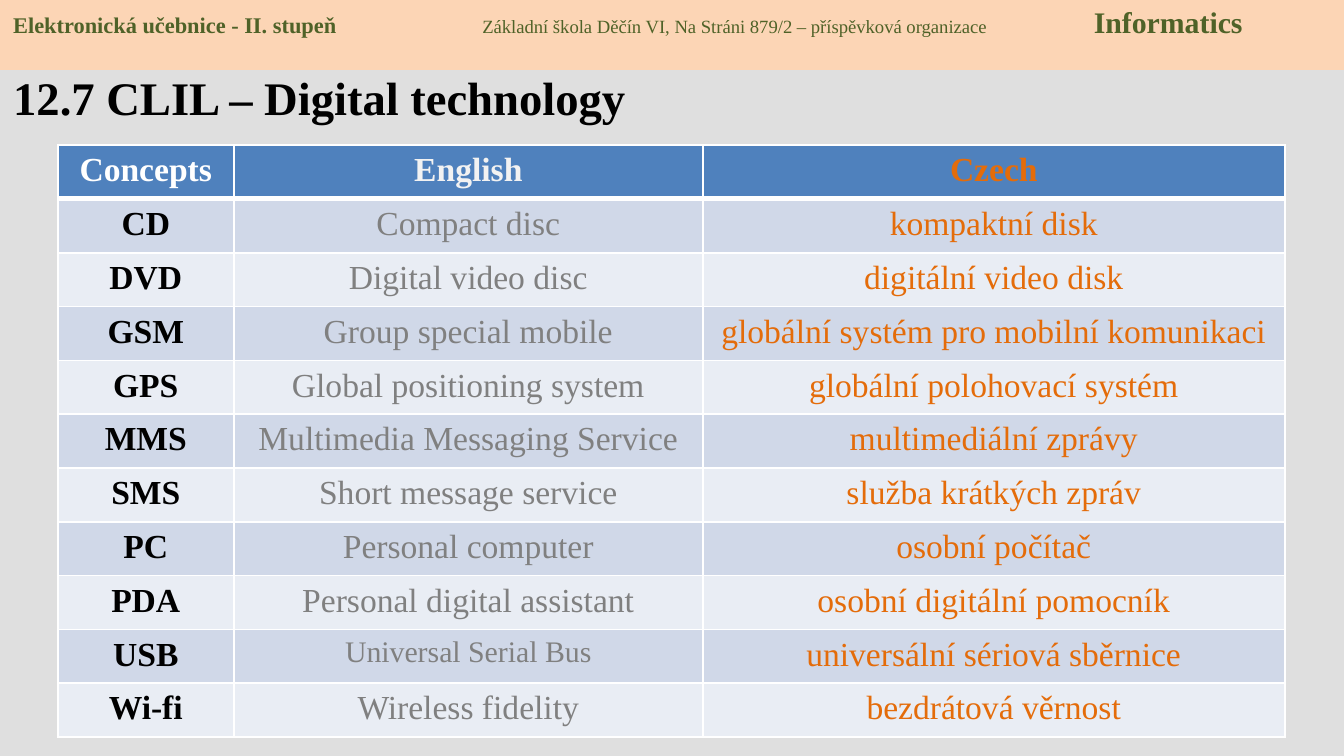
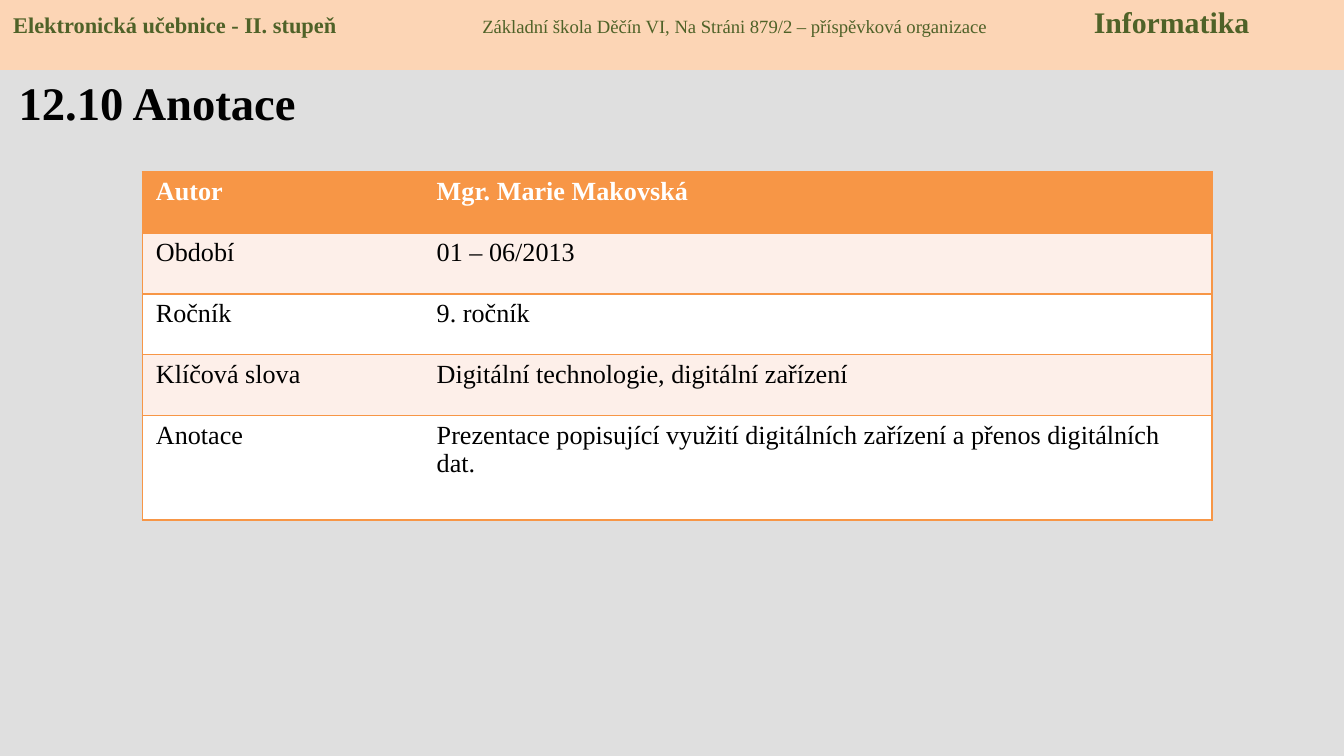
from lxml.etree import SubElement
from pptx import Presentation
from pptx.dml.color import RGBColor
from pptx.enum.shapes import MSO_SHAPE
from pptx.enum.text import MSO_ANCHOR, PP_ALIGN
from pptx.oxml.ns import qn
from pptx.util import Inches, Pt

COLUMNS, ROWS = 100, 56.25
SLIDE_WIDTH = Inches(10)
UNIT = SLIDE_WIDTH / COLUMNS

FONT = "Times New Roman"
BLACK, WHITE, GREY = "000000", "FFFFFF", "808080"
BACKGROUND = "DFDFDF"
BAND, BAND_TEXT = "FCD5B5", "4F6228"
BLUE, BLUE_BANDS = "4F81BD", ("D0D8E8", "E9EDF4")
ORANGE, ORANGE_BANDS = "F79646", ("FDEFE9", WHITE)
CZECH = "E46C0A"

BAND_BOX = (0, -0.2, COLUMNS, 5.4)
BAND_TABS = (34.9, 80.4)

CONCEPTS = [
    ("Concepts", "English", "Czech"),
    ("CD", "Compact disc", "kompaktní disk"),
    ("DVD", "Digital video disc", "digitální video disk"),
    ("GSM", "Group special mobile", "globální systém pro mobilní komunikaci"),
    ("GPS", "Global positioning system", "globální polohovací systém"),
    ("MMS", "Multimedia Messaging Service", "multimediální zprávy"),
    ("SMS", "Short message service", "služba krátkých zpráv"),
    ("PC", "Personal computer", "osobní počítač"),
    ("PDA", "Personal digital assistant", "osobní digitální pomocník"),
    ("USB", "Universal Serial Bus", "universální sériová sběrnice"),
    ("Wi-fi", "Wireless fidelity", "bezdrátová věrnost"),
]
ANNOTATION = [
    ("Autor", "Mgr. Marie Makovská"),
    ("Období", "01 – 06/2013"),
    ("Ročník", "9. ročník"),
    ("Klíčová slova", "Digitální technologie, digitální zařízení"),
    ("Anotace", "Prezentace popisující využití digitálních zařízení a přenos digitálních dat."),
]


def color(value):
    return RGBColor.from_string(value)


def grid(*lengths):
    return [round(length * UNIT) for length in lengths]


def paint(target, value):
    target.fill.solid()
    target.fill.fore_color.rgb = color(value)


def add_run(paragraph, text, size, value, bold=False):
    run = paragraph.add_run()
    run.text = text
    run.font.name = FONT
    run.font.size = Pt(size)
    run.font.bold = bold
    run.font.color.rgb = color(value)


def add_page(deck):
    page = deck.slides.add_slide(deck.slide_layouts[6])
    paint(page.background, BACKGROUND)
    return page


def add_title(page, box, text, anchor):
    title = page.shapes.add_textbox(*grid(*box)).text_frame
    title.word_wrap = True
    title.vertical_anchor = anchor
    add_run(title.paragraphs[0], text, 25, BLACK, True)


def add_band(page, subject):
    band = page.shapes.add_shape(MSO_SHAPE.RECTANGLE, *grid(*BAND_BOX))
    band.shadow.inherit = False
    band.line.fill.background()
    paint(band, BAND)
    band.text_frame.word_wrap = True
    band.text_frame.vertical_anchor = MSO_ANCHOR.TOP
    line = band.text_frame.paragraphs[0]
    line.alignment = PP_ALIGN.LEFT
    stops = SubElement(line._p.get_or_add_pPr(), qn("a:tabLst"))
    for position in grid(*BAND_TABS):
        SubElement(stops, qn("a:tab"), pos=str(position), algn="l")
    add_run(line, "Elektronická učebnice - II. stupeň\t", 12, BAND_TEXT, True)
    add_run(line, "Základní škola Děčín VI, Na Stráni 879/2 – příspěvková organizace\t", 10, BAND_TEXT)
    add_run(line, subject, 16, BAND_TEXT, True)


def set_borders(cell, value, widths):
    properties = cell._tc.get_or_add_tcPr()
    for side, width in zip("LRTB", widths):
        border = SubElement(properties, qn(f"a:ln{side}"), w=str(Pt(width)))
        if width:
            fill = SubElement(border, qn("a:solidFill"))
            SubElement(fill, qn("a:srgbClr"), val=value)
        else:
            SubElement(border, qn("a:noFill"))


def add_table(page, corner, widths, heights, content, header, bands, style_cell):
    box = (*corner, sum(widths), sum(heights))
    table = page.shapes.add_table(len(heights), len(widths), *grid(*box)).table
    for column, width in zip(table.columns, grid(*widths)):
        column.width = width
    for row, height in zip(table.rows, grid(*heights)):
        row.height = height
    for r, texts in enumerate(content):
        for c, text in enumerate(texts):
            cell = table.cell(r, c)
            style_cell(cell, r, c, text)
            paint(cell, bands[(r - 1) % 2] if r else header)


def concept_cell(cell, r, c, text):
    set_borders(cell, WHITE, (1, 1, 3 if r == 1 else 1, 1 if r else 3))
    values = (BLACK, GREY, CZECH) if r else (WHITE, "F2F2F2", CZECH)
    size = 16 if text == "Universal Serial Bus" else 18
    paragraph = cell.text_frame.paragraphs[0]
    paragraph.alignment = PP_ALIGN.CENTER
    add_run(paragraph, text, size, values[c], r == 0 or c == 0)


def annotation_cell(cell, r, c, text):
    set_borders(cell, ORANGE, (1 - c, c, 1, 1))
    cell.margin_left, cell.margin_right, cell.margin_top, cell.margin_bottom = grid(1, 1, 0.4, 0.4)
    add_run(cell.text_frame.paragraphs[0], text, 14, BLACK if r else WHITE, r == 0)


def add_concepts_page(deck):
    page = add_page(deck)
    add_title(page, (0, 2.5, 90, 9.4), "12.7 CLIL – Digital technology", MSO_ANCHOR.MIDDLE)
    add_band(page, "Informatics")
    add_table(page, (4.3, 10.8), (13.1, 34.9, 43.3), [4] * len(CONCEPTS),
              CONCEPTS, BLUE, BLUE_BANDS, concept_cell)


def add_annotation_page(deck):
    page = add_page(deck)
    add_title(page, (0.4, 5, 31.9, 4.9), "12.10 Anotace", MSO_ANCHOR.TOP)
    add_table(page, (10.6, 12.8), (20.9, 58.7), [4.53] * 4 + [7.8],
              ANNOTATION, ORANGE, ORANGE_BANDS, annotation_cell)
    add_band(page, "Informatika")


def main():
    deck = Presentation()
    deck.slide_width = SLIDE_WIDTH
    deck.slide_height = round(ROWS * UNIT)
    add_concepts_page(deck)
    add_annotation_page(deck)
    deck.save("out.pptx")


if __name__ == "__main__":
    main()
